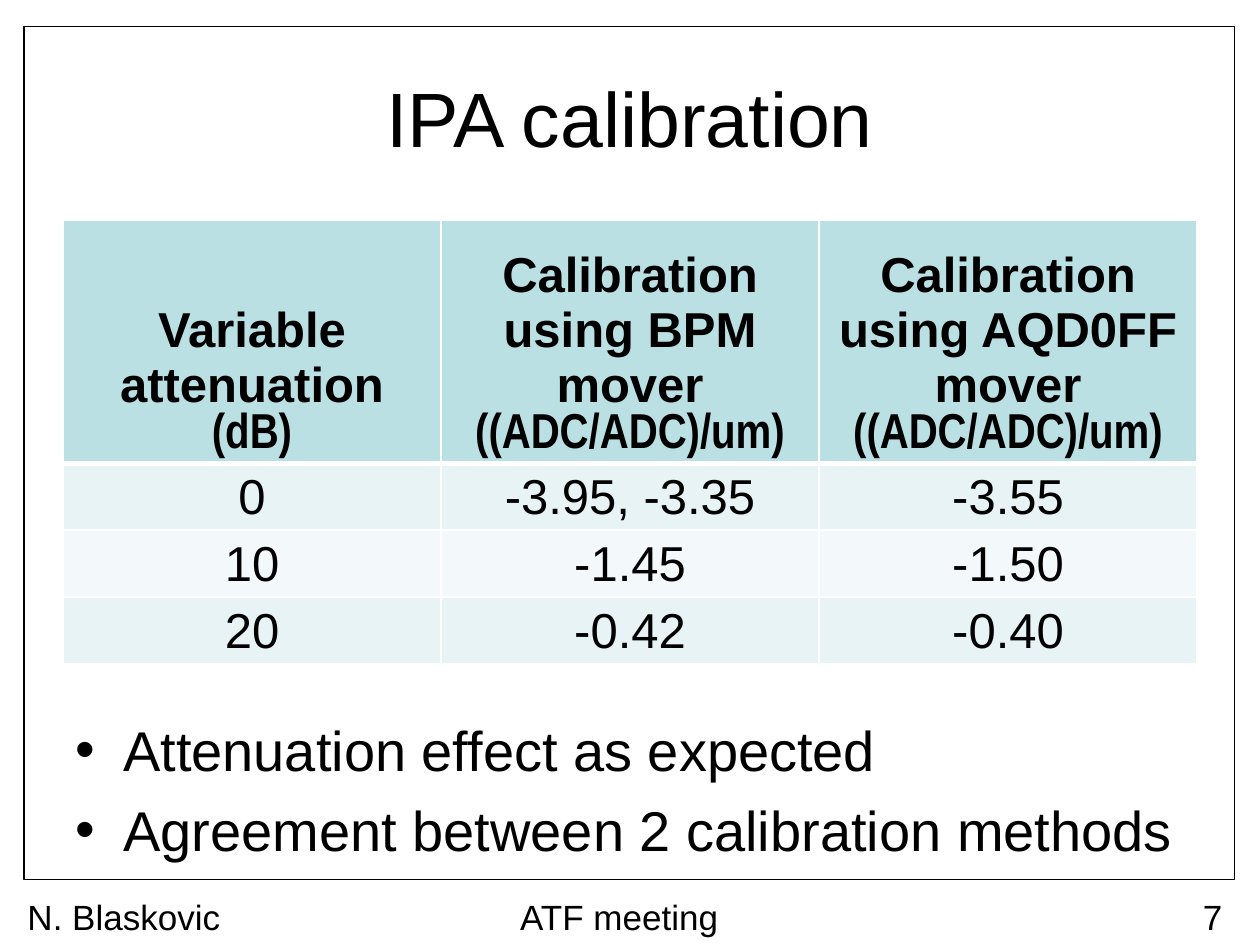
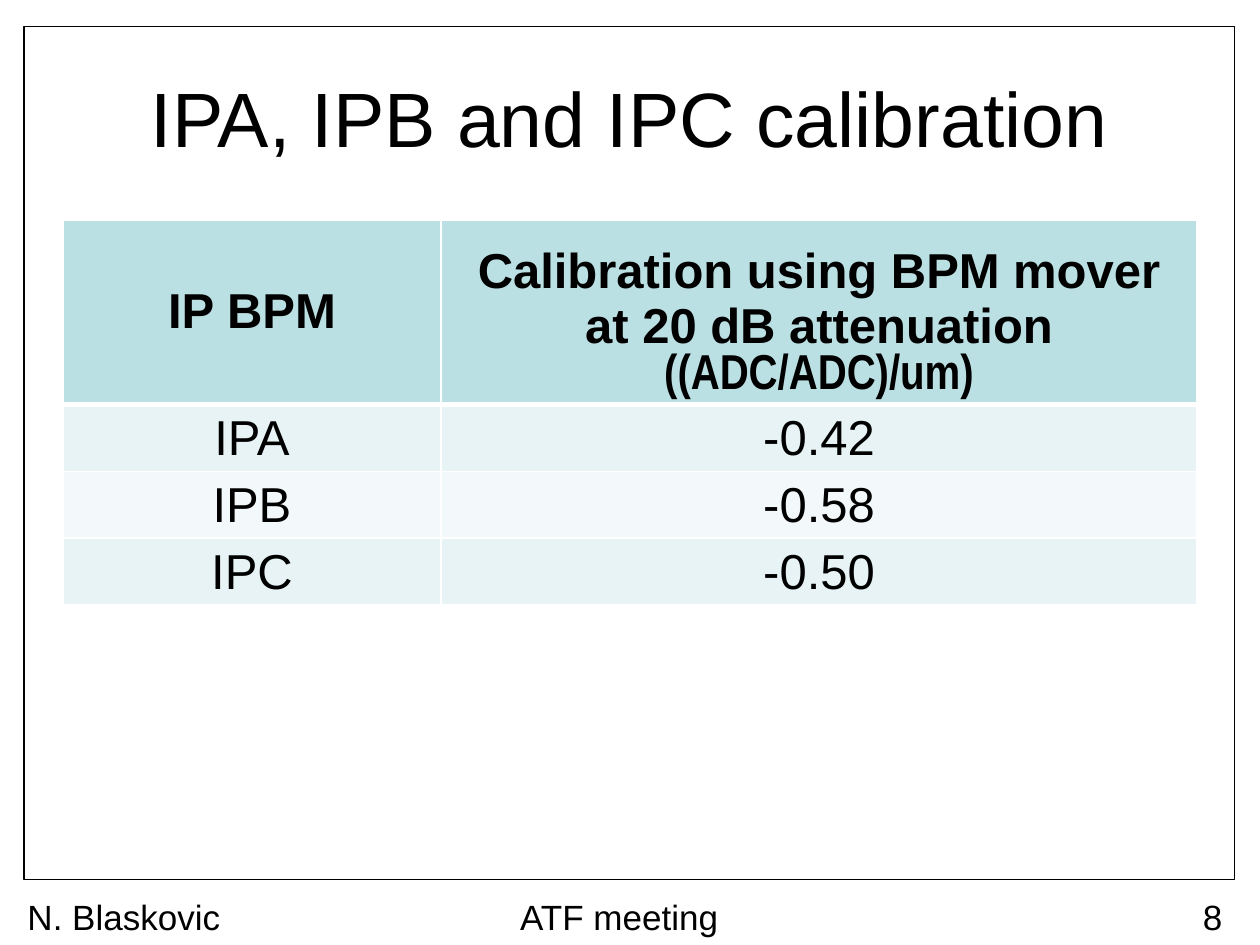
from pptx import Presentation
from pptx.dml.color import RGBColor
from pptx.enum.shapes import MSO_SHAPE
from pptx.enum.text import MSO_ANCHOR, PP_ALIGN
from pptx.oxml import parse_xml
from pptx.oxml.ns import nsdecls
from pptx.util import Inches, Pt

BLACK = RGBColor(0x00, 0x00, 0x00)
HEADER = RGBColor(0xBB, 0xE0, 0xE3)
BAND_DARK = RGBColor(0xE7, 0xF3, 0xF4)
BAND_LIGHT = RGBColor(0xF3, 0xF9, 0xFA)
FONT, UNIT_FONT = "Arial", "Arial Narrow"
ADC_UNIT = "((ADC/ADC)/um)"
ROW_HEIGHT = 0.53

# Header cells are (label, unit); body rows follow
SLIDES = [
    {
        "title": "IPA calibration",
        "number": 7,
        "columns": [3, 3, 3],
        "header_height": 1.76,
        "header": [("Variable attenuation", "(dB)"),
                   ("Calibration using BPM mover ", ADC_UNIT),
                   ("Calibration using AQD0FF mover ", ADC_UNIT)],
        "rows": [("0", "-3.95, -3.35", "-3.55"),
                 ("10", "-1.45", "-1.50"),
                 ("20", "-0.42", "-0.40")],
        "bullets": ["Attenuation effect as expected",
                    "Agreement between 2 calibration methods"],
    },
    {
        "title": "IPA, IPB and IPC calibration",
        "number": 8,
        "columns": [3, 6],
        "header_height": 1.33,
        "header": [("IP BPM", ""),
                   ("Calibration using BPM mover at 20 dB attenuation ", ADC_UNIT)],
        "rows": [("IPA", "-0.42"), ("IPB", "-0.58"), ("IPC", "-0.50")],
        "bullets": [],
    },
]


def style(font, size, name=FONT, bold=False):
    font.size, font.name, font.bold = Pt(size), name, bold
    font.color.rgb = BLACK


def add_text(s, box, lines, size, align=PP_ALIGN.LEFT, anchor=MSO_ANCHOR.TOP):
    tf = s.shapes.add_textbox(*[Inches(v) for v in box]).text_frame
    tf.word_wrap = True
    tf.vertical_anchor = anchor
    tf.text = "\n".join(lines)
    for p in tf.paragraphs:
        p.alignment = align
        for r in p.runs:
            style(r.font, size)
    return tf


prs = Presentation()
prs.slide_width, prs.slide_height = Inches(10), Inches(7.5)

for content in SLIDES:
    s = prs.slides.add_slide(prs.slide_layouts[6])

    # Page frame
    frame = s.shapes.add_shape(MSO_SHAPE.RECTANGLE, Inches(0.19), Inches(0.21),
                               Inches(9.61), Inches(6.77))
    frame.shadow.inherit = False
    frame.fill.background()
    frame.line.color.rgb = BLACK
    frame.line.width = Pt(0.75)

    # Title
    add_text(s, (0.5, 0.3, 9, 1.25), [content["title"]], 44,
             PP_ALIGN.CENTER, MSO_ANCHOR.MIDDLE)

    # Calibration table
    grid = [content["header"]] + content["rows"]
    widths = content["columns"]
    heights = [content["header_height"]] + [ROW_HEIGHT] * len(content["rows"])
    table = s.shapes.add_table(len(grid), len(widths), Inches(0.5), Inches(1.75),
                               Inches(9), Inches(sum(heights))).table
    for column, width in zip(table.columns, widths):
        column.width = Inches(width)
    for table_row, height in zip(table.rows, heights):
        table_row.height = Inches(height)

    for i, row in enumerate(grid):
        for j, value in enumerate(row):
            cell = table.cell(i, j)
            cell.margin_top, cell.margin_bottom = Inches(0.02), Inches(0.04)
            cell.vertical_anchor = MSO_ANCHOR.BOTTOM
            p = cell.text_frame.paragraphs[0]
            p.alignment = PP_ALIGN.CENTER
            cell.fill.solid()
            if i == 0:
                label, unit = value
                cell.fill.fore_color.rgb = HEADER
                r = p.add_run()
                r.text = label
                style(r.font, 28, bold=True)
                if unit:
                    if not label.endswith(" "):
                        p.add_line_break()
                    r = p.add_run()
                    r.text = unit
                    style(r.font, 28, UNIT_FONT, bold=True)
                else:
                    cell.vertical_anchor = MSO_ANCHOR.MIDDLE
            else:
                cell.fill.fore_color.rgb = BAND_DARK if i % 2 else BAND_LIGHT
                p.text = value
                style(p.runs[0].font, 28)

            # White borders, thicker below the header
            thick = {0: "lnB", 1: "lnT"}.get(i)
            tcPr = cell._tc.get_or_add_tcPr()
            for k, side in enumerate(("lnL", "lnR", "lnT", "lnB")):
                width = Pt(3 if side == thick else 1)
                tcPr.insert(k, parse_xml(
                    f'<a:{side} {nsdecls("a")} w="{width}"><a:solidFill>'
                    f'<a:srgbClr val="FFFFFF"/></a:solidFill></a:{side}>'))

    # Footer
    add_text(s, (1.53, 7.06, 6.77, 0.32), ["ATF meeting"], 20, PP_ALIGN.CENTER)
    add_text(s, (9.25, 7.06, 0.55, 0.32), [str(content["number"])], 20, PP_ALIGN.RIGHT)
    add_text(s, (0.12, 7.06, 1.73, 0.32), ["N. Blaskovic"], 20)

    # Conclusions
    if content["bullets"]:
        tf = add_text(s, (0.5, 5.63, 9, 1.3), content["bullets"], 32)
        for n, p in enumerate(tf.paragraphs):
            p.space_before = Pt(7.4 if n else 0)
            pPr = p._p.get_or_add_pPr()
            pPr.set("marL", str(Inches(0.38)))
            pPr.set("indent", str(Inches(-0.38)))
            pPr.append(parse_xml(f'<a:buFont {nsdecls("a")} typeface="{FONT}"/>'))
            pPr.append(parse_xml(f'<a:buChar {nsdecls("a")} char="•"/>'))

prs.save("out.pptx")
